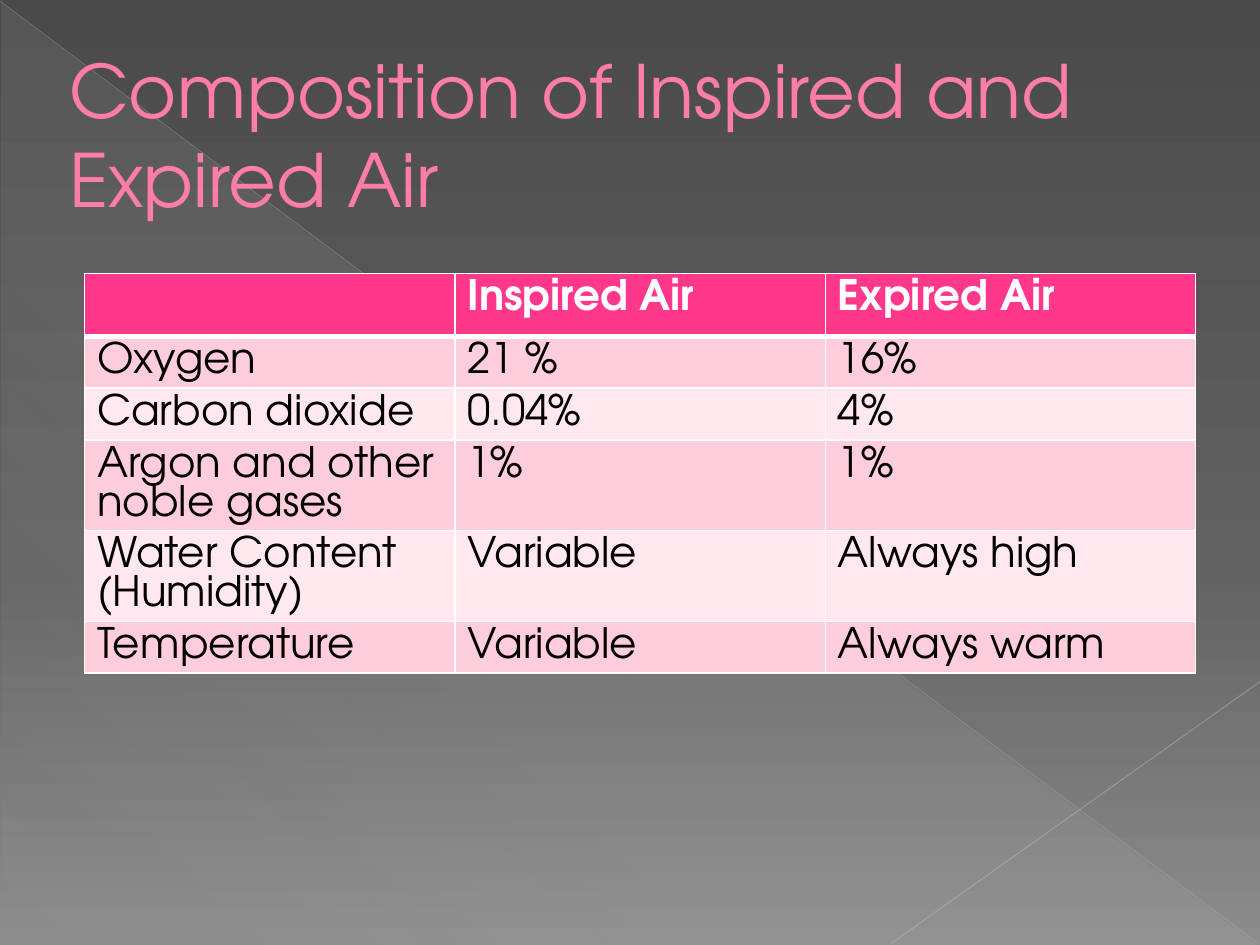
from pptx import Presentation
from pptx.dml.color import RGBColor
from pptx.enum.shapes import MSO_CONNECTOR, MSO_SHAPE
from pptx.enum.text import MSO_ANCHOR
from pptx.oxml.ns import qn
from pptx.util import Inches, Pt
from lxml.etree import SubElement

FONT = "TeX Gyre Adventor"
WHITE = RGBColor(0xFF, 0xFF, 0xFF)
BLACK = RGBColor(0x00, 0x00, 0x00)
TITLE_PINK = RGBColor(0xFF, 0x7D, 0xA7)
HEADER_PINK = RGBColor(0xFF, 0x38, 0x8C)
BAND_PINKS = [RGBColor(0xFF, 0xCE, 0xDA), RGBColor(0xFF, 0xE8, 0xEE)]
LIGHT_GREY = RGBColor(0xD2, 0xD2, 0xD2)
BACKDROP = [
    (0, RGBColor(0x4A, 0x4A, 0x4A), 100),
    (60, RGBColor(0x62, 0x62, 0x62), 100),
    (100, RGBColor(0x8C, 0x8C, 0x8C), 100),
]
SHEEN = [(0, LIGHT_GREY, 10), (70, LIGHT_GREY, 8), (100, LIGHT_GREY, 1)]
DIAGONALS = [
    ((0, 0.01), (9.99, 7.49), RGBColor(0xBF, 0xBF, 0xBF), 0.39, 35),
    ((10, 5.41), (7.07, 7.49), RGBColor(0xC6, 0xC6, 0xC6), 0.47, 45),
]

TITLE = "Composition of Inspired and Expired Air"
ROWS = [
    ("", "Inspired Air", "Expired Air"),
    ("Oxygen", "21 %", "16%"),
    ("Carbon dioxide", "0.04%", "4%"),
    ("Argon and other noble gases", "1%", "1%"),
    ("Water Content (Humidity)", "Variable", "Always high"),
    ("Temperature", "Variable", "Always warm"),
]
TABLE_LEFT, TABLE_TOP, COLUMN_WIDTH = 0.67, 2.17, 2.94
LINE_HEIGHT, CELL_PADDING, CHARACTERS_PER_LINE = 0.31, 0.1, 16


def add_color(parent, color, opacity=100):
    tag = SubElement(parent, qn("a:srgbClr"), val=str(color))
    if opacity < 100:
        SubElement(tag, qn("a:alpha"), val=str(opacity * 1000))


def set_gradient(fill, properties, stops, angle):
    fill.solid()
    solid = properties.find(qn("a:solidFill"))
    gradient = SubElement(properties, qn("a:gradFill"), rotWithShape="1")
    properties.replace(solid, gradient)
    stop_list = SubElement(gradient, qn("a:gsLst"))
    for position, color, opacity in stops:
        stop = SubElement(stop_list, qn("a:gs"), pos=str(position * 1000))
        add_color(stop, color, opacity)
    SubElement(gradient, qn("a:lin"), ang=str(angle * 60000), scaled="0")


def set_text(frame, text, size, color, spacing, bold=False):
    frame.text = text
    paragraph = frame.paragraphs[0]
    paragraph.line_spacing = Pt(spacing)
    for font in [paragraph.font] + [span.font for span in paragraph.runs]:
        font.name, font.size, font.bold = FONT, Pt(size), bold
        font.color.rgb = color


def set_borders(cell, widths):
    properties = cell._tc.get_or_add_tcPr()
    for index, (side, width) in enumerate(widths.items()):
        border = properties.makeelement(qn("a:" + side), {"w": str(Pt(width))})
        add_color(SubElement(border, qn("a:solidFill")), WHITE)
        properties.insert(index, border)


def add_backdrop(page):
    background = page.background.fill
    background.solid()
    set_gradient(background, page.element.find(".//" + qn("p:bgPr")), BACKDROP, 90)
    triangle = page.shapes.add_shape(
        MSO_SHAPE.RIGHT_TRIANGLE, Inches(0.01), Inches(0.02), Inches(9.98), Inches(7.48))
    triangle.shadow.inherit = False
    triangle.line.fill.background()
    set_gradient(triangle.fill, triangle.element.spPr, SHEEN, 133)
    for start, end, color, width, opacity in DIAGONALS:
        points = [Inches(length) for length in start + end]
        diagonal = page.shapes.add_connector(MSO_CONNECTOR.STRAIGHT, *points)
        diagonal.line.width = Pt(width)
        diagonal.line.color.rgb = color
        properties = diagonal.element.spPr
        tag = properties.find(".//" + qn("a:srgbClr"))
        SubElement(tag, qn("a:alpha"), val=str(opacity * 1000))
        SubElement(properties, qn("a:effectLst"))


def add_title(page):
    box = page.shapes.add_textbox(Inches(0.45), Inches(0.29), Inches(9.05), Inches(1.53))
    box.text_frame.word_wrap = True
    box.text_frame.vertical_anchor = MSO_ANCHOR.MIDDLE
    set_text(box.text_frame, TITLE, 42, TITLE_PINK, 51)


def add_air_table(page):
    heights = [
        CELL_PADDING + LINE_HEIGHT * (2 if len(row[0]) > CHARACTERS_PER_LINE else 1)
        for row in ROWS
    ]
    columns = len(ROWS[0])
    table = page.shapes.add_table(
        len(ROWS), columns, Inches(TABLE_LEFT), Inches(TABLE_TOP),
        Inches(COLUMN_WIDTH * columns), Inches(sum(heights))).table
    for column in table.columns:
        column.width = Inches(COLUMN_WIDTH)
    for number, (row, height) in enumerate(zip(ROWS, heights)):
        table.rows[number].height = Inches(height)
        header = number == 0
        widths = {"lnL": 1, "lnR": 1, "lnT": 3 if number == 1 else 1, "lnB": 3 if header else 1}
        for position, text in enumerate(row):
            cell = table.cell(number, position)
            cell.fill.solid()
            cell.fill.fore_color.rgb = HEADER_PINK if header else BAND_PINKS[(number - 1) % 2]
            set_text(cell.text_frame, text, 24, WHITE if header else BLACK, 22.3, header)
            set_borders(cell, widths)


def main():
    deck = Presentation()
    deck.slide_width, deck.slide_height = Inches(10), Inches(7.5)
    page = deck.slides.add_slide(deck.slide_layouts[6])
    add_backdrop(page)
    add_title(page)
    add_air_table(page)
    deck.save("out.pptx")


if __name__ == "__main__":
    main()
